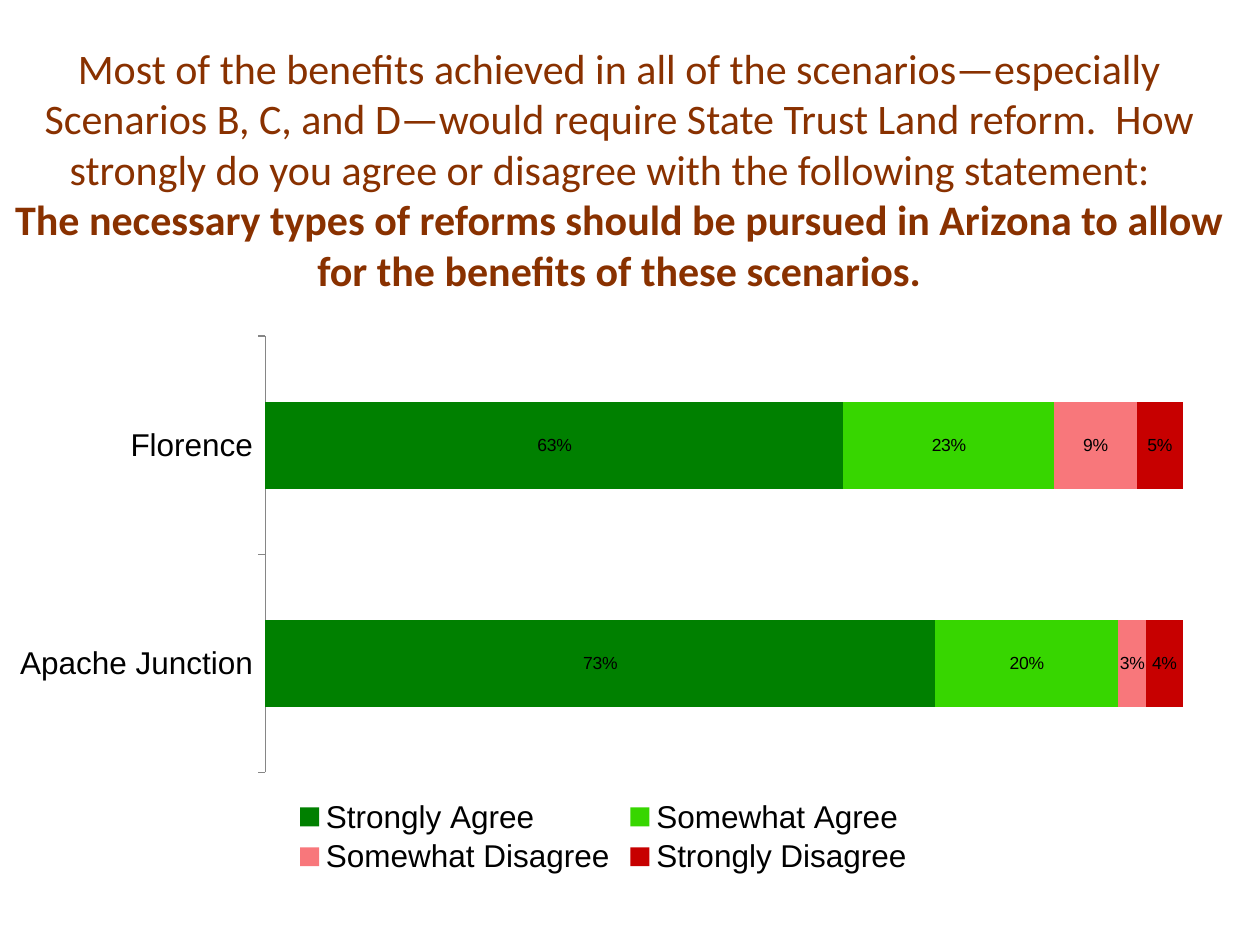
from lxml.etree import SubElement
from pptx import Presentation
from pptx.chart.data import CategoryChartData
from pptx.dml.color import RGBColor
from pptx.enum.chart import XL_CHART_TYPE, XL_LABEL_POSITION, XL_LEGEND_POSITION, XL_TICK_MARK
from pptx.enum.text import MSO_ANCHOR, MSO_AUTO_SIZE, PP_ALIGN
from pptx.oxml.ns import qn
from pptx.util import Cm, Pt

COLOURS = {
    "title": "893100",
    "text": "000000",
    "axis": "868686",
    "Strongly Agree": "008000",
    "Somewhat Agree": "37D600",
    "Somewhat Disagree": "F8777B",
    "Strongly Disagree": "C70000",
}
TOWNS = ["Apache Junction", "Florence"]
ANSWERS = {
    "Strongly Agree": (0.73, 0.63),
    "Somewhat Agree": (0.20, 0.23),
    "Somewhat Disagree": (0.03, 0.09),
    "Strongly Disagree": (0.04, 0.05),
}
QUESTION = (
    "Most of the benefits achieved in all of the scenarios—especially "
    "Scenarios B, C, and D—would require State Trust Land reform.  How "
    "strongly do you agree or disagree with the following statement:  "
)
STATEMENT = (
    "The necessary types of reforms should be pursued in Arizona to allow "
    "for the benefits of these scenarios."
)


def colour(name):
    return RGBColor.from_string(COLOURS[name])


def format_font(font, name="Arial", size=18, bold=False, color="text"):
    font.name = name
    font.size = Pt(size)
    font.bold = bold
    font.color.rgb = colour(color)


def add_text(paragraph, text, **font_format):
    run = paragraph.add_run()
    run.text = text
    format_font(run.font, **font_format)


def set_layout(parent, x, y, w, h, inner=False):
    """Place a chart part by fractions of the chart box."""
    layout = parent.find(qn("c:layout"))
    if layout is None:
        layout = SubElement(parent, qn("c:layout"))
        anchor = parent.find(qn("c:legendPos"))
        if anchor is not None:
            anchor.addnext(layout)
        else:
            parent.insert(0, layout)
    for child in list(layout):
        layout.remove(child)
    manual = SubElement(layout, qn("c:manualLayout"))
    settings = {"layoutTarget": "inner"} if inner else {}
    settings.update(xMode="edge", yMode="edge", x=x, y=y, w=w, h=h)
    for tag, value in settings.items():
        SubElement(manual, qn(f"c:{tag}")).set("val", str(value))


def fill_title(slide, left, top, width, height):
    title = slide.shapes.title
    title.left, title.top, title.width, title.height = left, top, width, height
    frame = title.text_frame
    frame.word_wrap = True
    frame.auto_size = MSO_AUTO_SIZE.NONE
    frame.vertical_anchor = MSO_ANCHOR.MIDDLE
    paragraph = frame.paragraphs[0]
    paragraph.alignment = PP_ALIGN.CENTER
    add_text(paragraph, QUESTION, name="Calibri", size=24, color="title")
    paragraph.add_line_break()
    add_text(paragraph, STATEMENT, name="Calibri", size=24, bold=True, color="title")


def add_answer_chart(slide, left, top, width, height):
    chart_data = CategoryChartData(number_format="0%")
    chart_data.categories = TOWNS
    for answer, shares in ANSWERS.items():
        chart_data.add_series(answer, shares)
    chart = slide.shapes.add_chart(
        XL_CHART_TYPE.BAR_STACKED_100, left, top, width, height, chart_data
    ).chart
    chart.has_title = False
    format_font(chart.font)

    # Bars and their labels
    plot = chart.plots[0]
    plot.gap_width = 150
    plot.overlap = 100
    plot.vary_by_categories = False
    for series in plot.series:
        series.format.fill.solid()
        series.format.fill.fore_color.rgb = colour(series.name)
        labels = series.data_labels
        labels.show_value = True
        labels.number_format = "0%"
        labels.number_format_is_linked = False
        labels.position = XL_LABEL_POSITION.CENTER
        format_font(labels.font, size=10)

    # Axes
    towns = chart.category_axis
    towns.major_tick_mark = XL_TICK_MARK.OUTSIDE
    towns.minor_tick_mark = XL_TICK_MARK.NONE
    towns.format.line.color.rgb = colour("axis")
    towns.format.line.width = Pt(0.75)
    shares_axis = chart.value_axis
    shares_axis.has_major_gridlines = False
    shares_axis.visible = False

    # Legend in two rows under the bars
    chart.has_legend = True
    legend = chart.legend
    legend.position = XL_LEGEND_POSITION.BOTTOM
    legend.include_in_layout = False
    format_font(legend.font)

    plot_area = chart.element.find(f".//{qn('c:plotArea')}")
    set_layout(plot_area, 0.22, 0.02, 0.76, 0.78, inner=True)
    set_layout(chart.element.find(f".//{qn('c:legend')}"), 0.24, 0.84, 0.52, 0.15)


def main():
    presentation = Presentation()
    presentation.slide_width = Cm(25.4)
    presentation.slide_height = Cm(19.05)
    slide = presentation.slides.add_slide(presentation.slide_layouts[5])
    fill_title(slide, Cm(0), Cm(1.07), Cm(24.97), Cm(4.65))
    add_answer_chart(slide, Cm(0), Cm(6.55), Cm(24.33), Cm(11.28))
    presentation.save("out.pptx")


if __name__ == "__main__":
    main()
